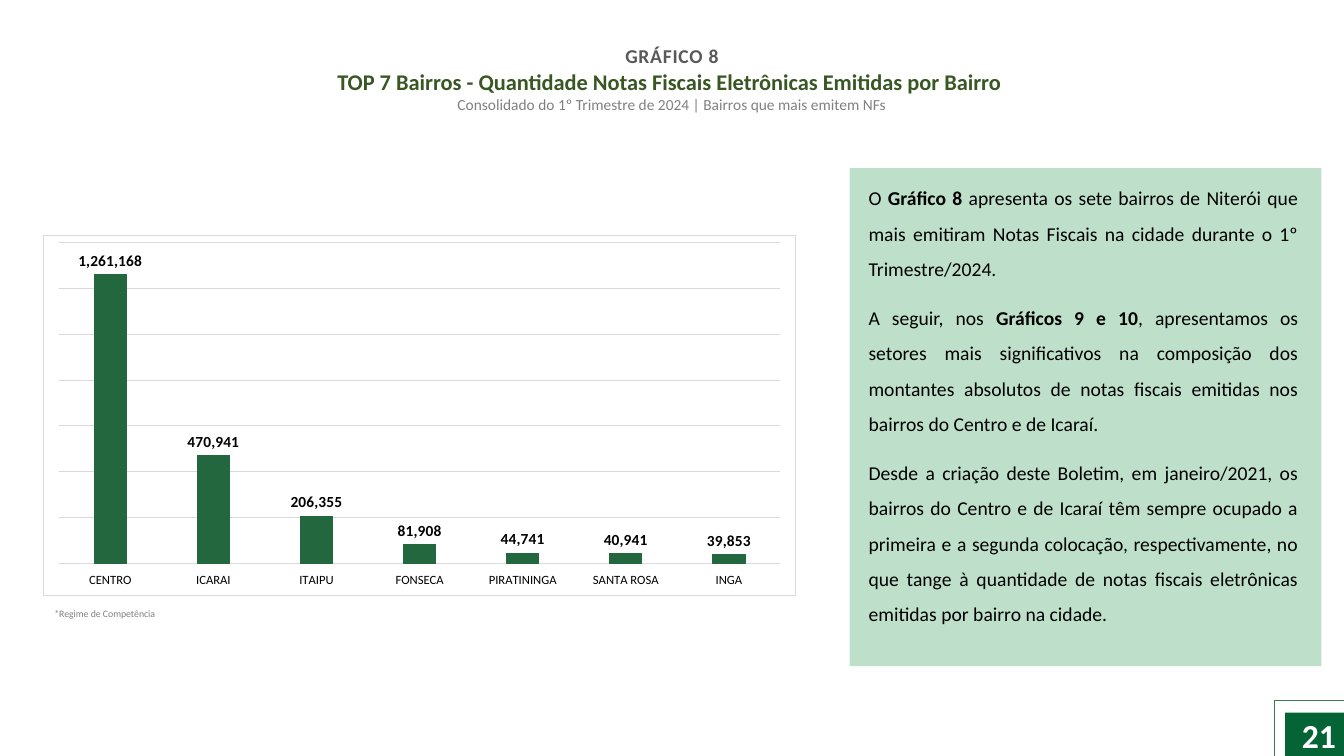
from dataclasses import dataclass

from lxml import etree
from pptx import Presentation
from pptx.chart.data import CategoryChartData
from pptx.dml.color import RGBColor
from pptx.enum.chart import XL_CHART_TYPE as ChartType
from pptx.enum.chart import XL_LABEL_POSITION as LabelPosition
from pptx.enum.chart import XL_TICK_LABEL_POSITION as TickLabelPosition
from pptx.enum.chart import XL_TICK_MARK as TickMark
from pptx.enum.shapes import MSO_CONNECTOR as Connector
from pptx.enum.shapes import MSO_SHAPE as ShapeType
from pptx.enum.text import MSO_ANCHOR as Anchor
from pptx.enum.text import MSO_AUTO_SIZE as AutoSize
from pptx.enum.text import PP_ALIGN as Align
from pptx.oxml import parse_xml
from pptx.oxml.ns import nsdecls, qn
from pptx.util import Cm, Pt

FONT = "Calibri"
BAR_GREEN = "23673F"
GRID_GREY = "D9D9D9"


@dataclass
class Box:
    left: float
    top: float
    width: float
    height: float

    def lengths(self) -> tuple:
        return Cm(self.left), Cm(self.top), Cm(self.width), Cm(self.height)


@dataclass
class Style:
    size: float
    color: str
    bold: bool = False
    spacing: int = 0


@dataclass
class Line:
    text: str
    style: Style


HEADING = [
    Line("GRÁFICO 8", Style(14, "595959", True, 50)),
    Line("TOP 7 Bairros - Quantidade Notas Fiscais Eletrônicas Emitidas por Bairro ",
         Style(16, "385723", True)),
    Line("Consolidado do 1º Trimestre de 2024 | Bairros que mais emitem NFs",
         Style(11, "808080")),
]

# Each paragraph alternates plain and bold pieces, starting with plain
COMMENTARY = [
    ["O ", "Gráfico 8",
     " apresenta os sete bairros de Niterói que mais emitiram Notas Fiscais na cidade "
     "durante o 1º Trimestre/2024. "],
    ["A seguir, nos ", "Gráficos 9 e 10",
     ", apresentamos os setores mais significativos na composição dos montantes absolutos "
     "de notas fiscais emitidas nos bairros do Centro e de Icaraí."],
    ["Desde a criação deste Boletim, em janeiro/2021, os bairros do Centro e de Icaraí têm "
     "sempre ocupado a primeira e a segunda colocação, respectivamente, no que tange à "
     "quantidade de notas fiscais eletrônicas emitidas por bairro na cidade."],
]

INVOICES = {
    "CENTRO": 1261168,
    "ICARAI": 470941,
    "ITAIPU": 206355,
    "FONSECA": 81908,
    "PIRATININGA": 44741,
    "SANTA ROSA": 40941,
    "INGA": 39853,
}


def rgb(color: str) -> RGBColor:
    return RGBColor.from_string(color)


def format_font(font, style: Style) -> None:
    font.name, font.size, font.bold = FONT, Pt(style.size), style.bold
    font.color.rgb = rgb(style.color)


def format_line(line, color: str, width: float) -> None:
    line.color.rgb = rgb(color)
    line.width = Pt(width)


def add_panel(slide, box: Box, color: str) -> None:
    shape = slide.shapes.add_shape(ShapeType.RECTANGLE, *box.lengths())
    shape.shadow.inherit = False
    shape.fill.solid()
    shape.fill.fore_color.rgb = rgb(color)
    shape.line.fill.background()


def add_rule(slide, start: tuple, end: tuple) -> None:
    points = [Cm(value) for value in start + end]
    connector = slide.shapes.add_connector(Connector.STRAIGHT, *points)
    format_line(connector.line, "3A7B51", 0.5)
    etree.SubElement(connector.element.spPr, qn("a:effectLst"))


def add_text(slide, box: Box, line: Line) -> None:
    text_frame = slide.shapes.add_textbox(*box.lengths()).text_frame
    text_frame.word_wrap = True
    text_frame.text = line.text
    format_font(text_frame.paragraphs[0].runs[0].font, line.style)


def add_heading(slide) -> None:
    title = slide.shapes.title
    title.left, title.top, title.width, title.height = Box(0, 0.99, 33.87, 2.01).lengths()
    text_frame = title.text_frame
    text_frame.auto_size = AutoSize.NONE
    text_frame.vertical_anchor = Anchor.TOP
    text_frame.text = "\n".join(line.text for line in HEADING)
    for paragraph, line in zip(text_frame.paragraphs, HEADING):
        paragraph.alignment = Align.CENTER
        paragraph.line_spacing = 1.0
        paragraph.space_before = Pt(0)
        run = paragraph.runs[0]
        format_font(run.font, line.style)
        run.font._element.set("spc", str(line.style.spacing))


def add_commentary(slide, box: Box) -> None:
    text_frame = slide.shapes.add_textbox(*box.lengths()).text_frame
    text_frame.word_wrap = True
    for index, pieces in enumerate(COMMENTARY):
        paragraph = text_frame.add_paragraph() if index else text_frame.paragraphs[0]
        paragraph.alignment = Align.JUSTIFY
        paragraph.line_spacing = 1.5
        paragraph.space_after = Pt(10)
        for position, piece in enumerate(pieces):
            run = paragraph.add_run()
            run.text = piece
            format_font(run.font, Style(14, "000000", position % 2 == 1))


def add_invoice_chart(slide, box: Box) -> None:
    data = CategoryChartData(number_format="#,##0")
    data.categories = list(INVOICES)
    data.add_series("Notas Fiscais", list(INVOICES.values()))
    chart = slide.shapes.add_chart(ChartType.COLUMN_CLUSTERED, *box.lengths(), data).chart
    chart.has_legend = chart.has_title = False
    format_font(chart.font, Style(10, "000000"))

    # Axes
    categories, values = chart.category_axis, chart.value_axis
    categories.major_tick_mark = categories.minor_tick_mark = TickMark.NONE
    categories.tick_label_position = TickLabelPosition.LOW
    format_font(categories.tick_labels.font, Style(9, "000000"))
    format_line(categories.format.line, GRID_GREY, 0.75)
    values.visible = False
    values.minimum_scale, values.maximum_scale, values.major_unit = 0, 1400000, 200000
    format_line(values.major_gridlines.format.line, GRID_GREY, 0.75)

    # Columns and their labels
    plot = chart.plots[0]
    plot.gap_width, plot.overlap, plot.vary_by_categories = 219, -27, False
    series = plot.series[0]
    series.format.fill.solid()
    series.format.fill.fore_color.rgb = rgb(BAR_GREEN)
    format_line(series.format.line, BAR_GREEN, 0.75)
    labels = series.data_labels
    labels.show_value = True
    labels.position = LabelPosition.OUTSIDE_END
    labels.number_format, labels.number_format_is_linked = "#,##0", False
    format_font(labels.font, Style(11, "000000", True))

    # Chart area fill and border
    chart.element.find(qn("c:chart")).addnext(parse_xml(
        f'<c:spPr {nsdecls("c", "a")}>'
        '<a:solidFill><a:srgbClr val="FFFFFF"/></a:solidFill>'
        f'<a:ln w="{Pt(0.75)}"><a:solidFill><a:srgbClr val="{GRID_GREY}"/></a:solidFill></a:ln>'
        '</c:spPr>'))


def main() -> None:
    presentation = Presentation()
    presentation.slide_width, presentation.slide_height = Cm(33.87), Cm(19.05)
    slide = presentation.slides.add_slide(presentation.slide_layouts[5])

    add_heading(slide)

    # Commentary panel
    add_panel(slide, Box(21.41, 4.24, 11.89, 12.55), "BEE0CA")
    add_commentary(slide, Box(21.64, 4.27, 11.33, 12.65))

    # Chart and footnote
    add_invoice_chart(slide, Box(1.09, 5.92, 18.97, 9.09))
    add_text(slide, Box(1.12, 15.19, 17.17, 0.56),
             Line("*Regime de Competência", Style(7, "808080")))

    # Page number corner
    add_panel(slide, Box(32.39, 17.96, 1.52, 1.14), "056435")
    corner = (32.11, 17.65)
    add_rule(slide, (32.11, 19.1), corner)
    add_rule(slide, corner, (33.87, 17.65))
    add_text(slide, Box(32.56, 17.88, 1.47, 1.27), Line("21", Style(24, "FFFFFF", True)))

    presentation.save("out.pptx")


if __name__ == "__main__":
    main()
